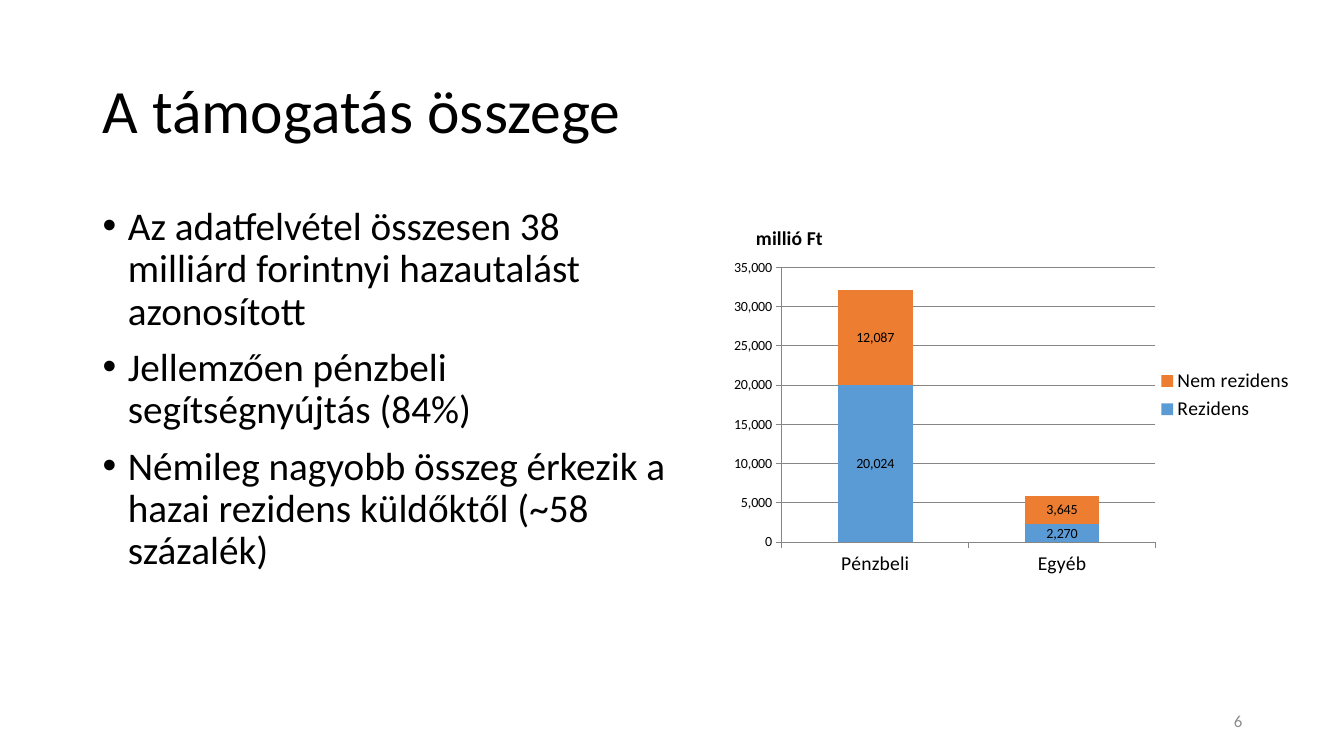
from lxml import etree
from pptx import Presentation
from pptx import util as u
from pptx.chart.data import CategoryChartData
from pptx.dml.color import RGBColor
from pptx.enum import chart as ch, text
from pptx.oxml.ns import qn

BLACK = RGBColor(0x00, 0x00, 0x00)
GRAY = RGBColor(0x8C, 0x8C, 0x8C)
LINE = RGBColor(0x86, 0x86, 0x86)
BLUE = RGBColor(0x5B, 0x9B, 0xD5)
ORANGE = RGBColor(0xED, 0x7D, 0x31)
FONT = "Calibri"

BULLETS = [
    "Az adatfelvétel összesen 38 milliárd forintnyi hazautalást azonosított",
    "Jellemzően pénzbeli segítségnyújtás (84%)",
    "Némileg nagyobb összeg érkezik a hazai rezidens küldőktől (~58 százalék)",
]
CATEGORIES = ["Pénzbeli", "Egyéb"]
SERIES = [
    ("Rezidens", (20024, 2270), BLUE),
    ("Nem rezidens", (12087, 3645), ORANGE),
]


def set_font(font, size, color=BLACK, bold=False):
    font.name = FONT
    font.size = u.Pt(size)
    font.bold = bold
    font.color.rgb = color


def add_frame(s, box, anchor):
    tf = s.shapes.add_textbox(*map(u.Inches, box)).text_frame
    tf.word_wrap = True
    tf.vertical_anchor = anchor
    return tf


def add_run(p, words, size, color=BLACK):
    r = p.add_run()
    r.text = words
    set_font(r.font, size, color)


def add_title(s, box):
    p = add_frame(s, box, text.MSO_ANCHOR.MIDDLE).paragraphs[0]
    p.line_spacing = 0.9
    add_run(p, "A támogatás összege", 44)


def add_bullets(s, box):
    tf = add_frame(s, box, text.MSO_ANCHOR.TOP)
    for i, words in enumerate(BULLETS):
        p = tf.add_paragraph() if i else tf.paragraphs[0]
        p.line_spacing = 0.9
        p.space_before = u.Pt(10 if i else 0)
        pPr = p._p.get_or_add_pPr()
        pPr.set("marL", str(u.Inches(0.25)))
        pPr.set("indent", str(u.Inches(-0.25)))
        etree.SubElement(pPr, qn("a:buFont"), typeface="Arial")
        etree.SubElement(pPr, qn("a:buChar"), char="•")
        add_run(p, words, 28)


def add_page_number(s, box):
    p = add_frame(s, box, text.MSO_ANCHOR.MIDDLE).paragraphs[0]
    p.alignment = text.PP_ALIGN.RIGHT
    add_run(p, "6", 12, GRAY)


def set_layout(parent, index, **values):
    for old in parent.findall(qn("c:layout")):
        parent.remove(old)
    layout = etree.Element(qn("c:layout"))
    manual = etree.SubElement(layout, qn("c:manualLayout"))
    for tag, val in values.items():
        etree.SubElement(manual, qn("c:" + tag), val=str(val))
    parent.insert(index, layout)


def style_axis(axis, size):
    set_font(axis.tick_labels.font, size)
    axis.major_tick_mark = ch.XL_TICK_MARK.OUTSIDE
    axis.minor_tick_mark = ch.XL_TICK_MARK.NONE
    axis.format.line.color.rgb = LINE
    axis.format.line.width = u.Pt(0.75)


def add_unit_title(axis):
    tf = axis.axis_title.text_frame
    r = tf.paragraphs[0].add_run()
    r.text = "millió Ft"
    set_font(r.font, 14, bold=True)
    tf._txBody.bodyPr.set("rot", "0")
    tf._txBody.bodyPr.set("vert", "horz")
    set_layout(axis.axis_title._element, 1,
               xMode="edge", yMode="edge", x=0.07, y=0.05)


def add_amount_chart(s, box):
    data = CategoryChartData(number_format="#,##0")
    data.categories = CATEGORIES
    for name, values, _ in SERIES:
        data.add_series(name, values)
    chart = s.shapes.add_chart(ch.XL_CHART_TYPE.COLUMN_STACKED,
                               *map(u.Inches, box), data).chart
    set_font(chart.font, 10)
    chart.has_title = False

    chart.has_legend = True
    chart.legend.position = ch.XL_LEGEND_POSITION.RIGHT
    chart.legend.include_in_layout = False
    set_font(chart.legend.font, 14)

    plot = chart.plots[0]
    plot.gap_width = 150
    plot.overlap = 100
    plot.vary_by_categories = False
    for series, (_, _, color) in zip(plot.series, SERIES):
        series.format.fill.solid()
        series.format.fill.fore_color.rgb = color
        labels = series.data_labels
        labels.show_value = True
        labels.number_format = "#,##0"
        labels.number_format_is_linked = False
        set_font(labels.font, 10)

    style_axis(chart.category_axis, 14)
    axis = chart.value_axis
    style_axis(axis, 10)
    axis.minimum_scale, axis.maximum_scale, axis.major_unit = 0, 35000, 5000
    axis.tick_labels.number_format = "#,##0"
    axis.tick_labels.number_format_is_linked = False
    axis.has_major_gridlines = True
    axis.major_gridlines.format.line.color.rgb = LINE
    axis.major_gridlines.format.line.width = u.Pt(0.75)
    add_unit_title(axis)

    plot_area = chart._chartSpace.chart.plotArea
    set_layout(plot_area, 0, layoutTarget="inner", xMode="edge", yMode="edge",
               x=0.12, y=0.17, w=0.63, h=0.71)


def main():
    prs = Presentation()
    prs.slide_width = u.Inches(13.33)
    prs.slide_height = u.Inches(7.5)
    s = prs.slides.add_slide(prs.slide_layouts[6])
    add_title(s, (0.92, 0.4, 11.5, 1.45))
    add_bullets(s, (0.92, 2, 5.88, 4.76))
    add_page_number(s, (9.42, 6.95, 3, 0.4))
    add_amount_chart(s, (7.05, 2, 5.88, 3.84))
    prs.save("out.pptx")


if __name__ == "__main__":
    main()
